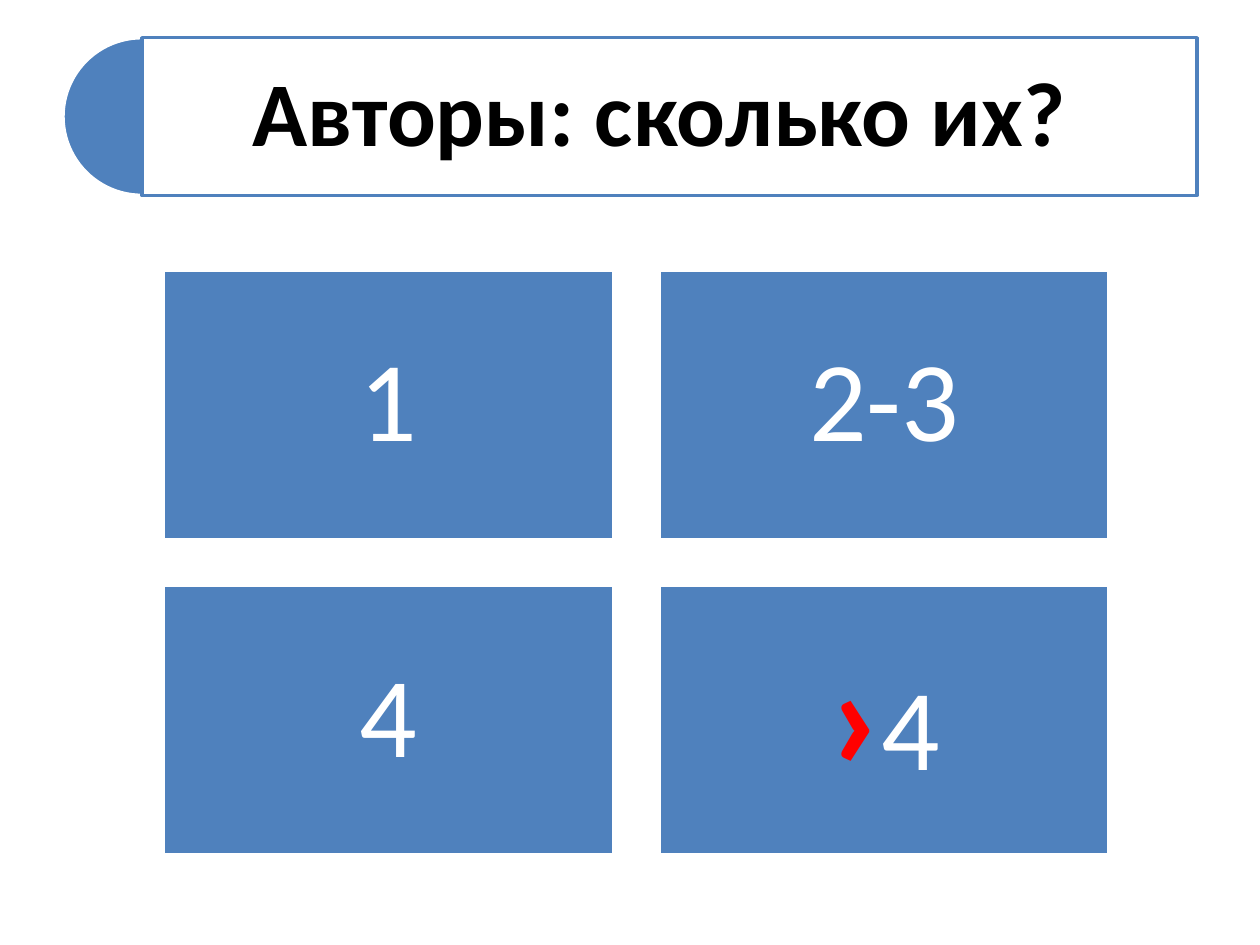
from dataclasses import dataclass

from lxml import etree
from pptx import Presentation
from pptx.dml.color import RGBColor
from pptx.enum.shapes import MSO_SHAPE
from pptx.enum.text import MSO_ANCHOR, PP_ALIGN
from pptx.oxml.ns import qn
from pptx.util import Cm, Pt

BLUE = RGBColor(0x4F, 0x81, 0xBD)
WHITE = RGBColor(0xFF, 0xFF, 0xFF)
BLACK = RGBColor(0x00, 0x00, 0x00)
RED = RGBColor(0xFF, 0x00, 0x00)

PIE = MSO_SHAPE.PIE
RECTANGLE = MSO_SHAPE.RECTANGLE
MIDDLE = MSO_ANCHOR.MIDDLE
CENTER = PP_ALIGN.CENTER

FONT = "Calibri"
BLANK_LAYOUT = 6

# Lengths in centimetres
TITLE_TOP, TITLE_HEIGHT = 0.76, 3.18
PIE_LEFT = 1.27
TITLE_LEFT, TITLE_WIDTH = 2.86, 21.27
GRID_LEFT, GRID_TOP = 3.3, 5.44
TILE_WIDTH, TILE_HEIGHT, TILE_GAP = 9.07, 5.44, 0.92
COLUMNS = 2


@dataclass(frozen=True)
class TextRun:
    text: str
    size: int
    color: RGBColor = WHITE
    bold: bool = False


@dataclass(frozen=True)
class Tile:
    runs: tuple[TextRun, ...]
    inset: float = 0.69


TITLE = (TextRun("Авторы: сколько их? ", 52, BLACK, True),)
TILES = (
    Tile((TextRun("1", 65),)),
    Tile((TextRun("2-3", 65),)),
    Tile((TextRun("4", 65),)),
    Tile((TextRun("›", 88, RED, True), TextRun("4", 66)), inset=0.94),
)


def add_block(slide, kind, left: float, top: float, width: float, height: float,
              fill: RGBColor, line: RGBColor):
    shape = slide.shapes.add_shape(kind, Cm(left), Cm(top), Cm(width), Cm(height))
    shape.shadow.inherit = False
    shape.fill.solid()
    shape.fill.fore_color.rgb = fill
    shape.line.color.rgb = line
    shape.line.width = Pt(2)
    return shape


def write_text(shape, runs: tuple[TextRun, ...], inset: float) -> None:
    frame = shape.text_frame
    frame.word_wrap = True
    frame.vertical_anchor = MIDDLE
    frame.margin_left = frame.margin_right = Cm(inset)
    frame.margin_top = frame.margin_bottom = Cm(inset)
    paragraph = frame.paragraphs[0]
    paragraph.alignment = CENTER
    paragraph.line_spacing = 0.9
    for item in runs:
        run = paragraph.add_run()
        run.text = item.text
        run.font.name = FONT
        run.font.size = Pt(item.size)
        run.font.bold = item.bold
        run.font.color.rgb = item.color


def set_fill_opacity(shape, percent: int) -> None:
    color = shape.fill._xPr.find(qn("a:solidFill"))[0]
    etree.SubElement(color, qn("a:alpha")).set("val", str(percent * 1000))


def add_title(slide) -> None:
    pie = add_block(slide, PIE, PIE_LEFT, TITLE_TOP, TITLE_HEIGHT, TITLE_HEIGHT,
                    BLUE, WHITE)
    # Left half of the disc: from 90 to 270 degrees
    pie.adjustments[0] = 54
    pie.adjustments[1] = 162
    banner = add_block(slide, RECTANGLE, TITLE_LEFT, TITLE_TOP, TITLE_WIDTH,
                       TITLE_HEIGHT, WHITE, BLUE)
    set_fill_opacity(banner, 90)
    write_text(banner, TITLE, inset=0.56)


def add_tiles(slide) -> None:
    for index, tile in enumerate(TILES):
        row, column = divmod(index, COLUMNS)
        left = GRID_LEFT + column * (TILE_WIDTH + TILE_GAP)
        top = GRID_TOP + row * (TILE_HEIGHT + TILE_GAP)
        block = add_block(slide, RECTANGLE, left, top, TILE_WIDTH, TILE_HEIGHT,
                          BLUE, WHITE)
        write_text(block, tile.runs, tile.inset)


def main() -> None:
    presentation = Presentation()
    presentation.slide_width = Cm(25.4)
    presentation.slide_height = Cm(19.05)
    slide = presentation.slides.add_slide(presentation.slide_layouts[BLANK_LAYOUT])
    add_title(slide)
    add_tiles(slide)
    presentation.save("out.pptx")


if __name__ == "__main__":
    main()
